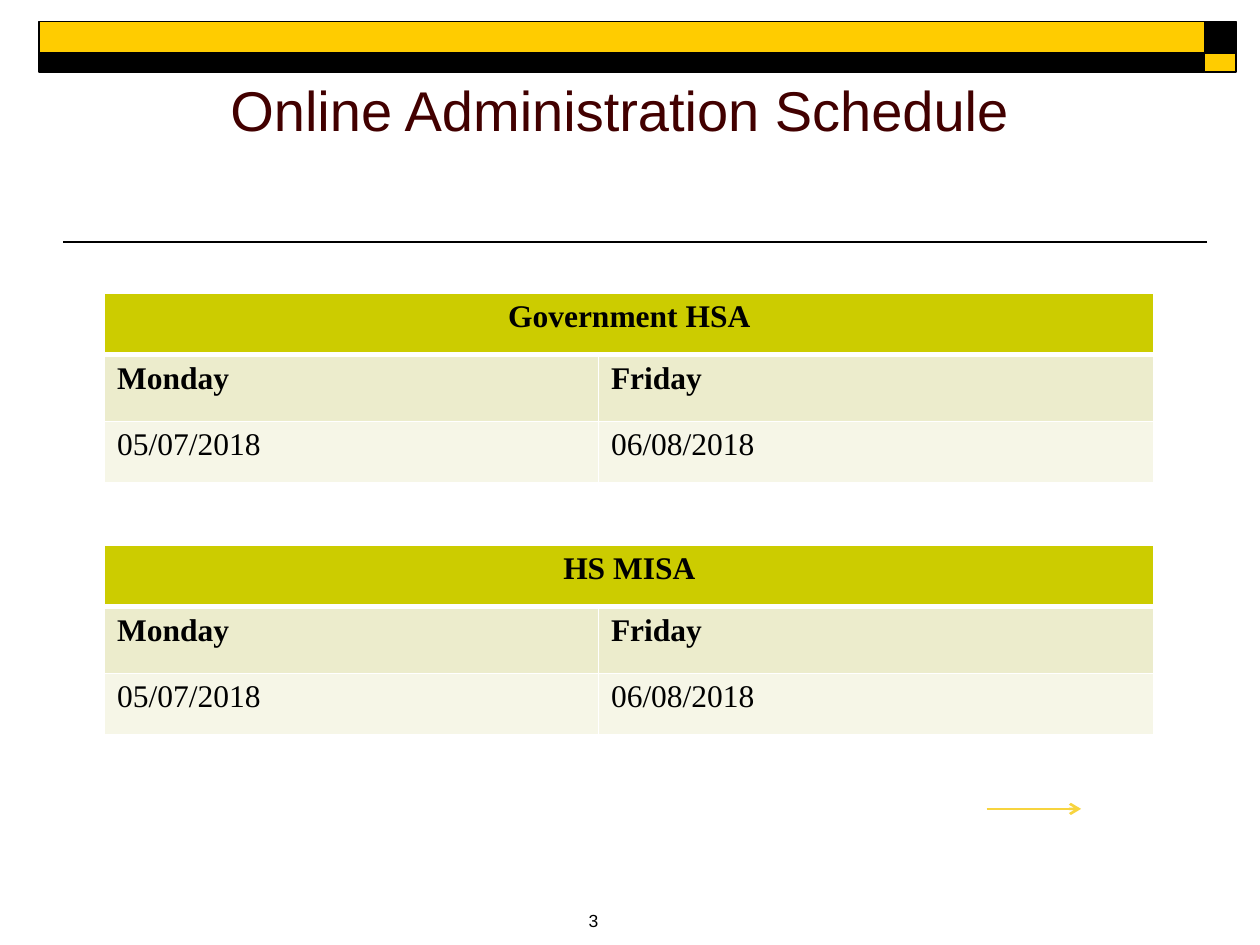
from dataclasses import dataclass

from lxml.etree import SubElement
from pptx import Presentation
from pptx.dml.color import RGBColor as RGB
from pptx.enum.shapes import MSO_CONNECTOR as Connector, MSO_SHAPE as Shape
from pptx.enum.text import MSO_ANCHOR as Anchor, MSO_AUTO_SIZE as AutoSize, PP_ALIGN as Align
from pptx.oxml.ns import qn
from pptx.util import Inches, Pt


@dataclass(frozen=True)
class Theme:
    black: str = "000000"
    white: str = "FFFFFF"
    gold: str = "FFCC00"
    maroon: str = "420000"
    arrow: str = "F7D43F"
    header: str = "CCCC00"
    days: str = "ECECCC"
    dates: str = "F6F6E7"
    sans: str = "Arial"
    serif: str = "Times New Roman"
    title_size: int = 32
    table_size: int = 18
    number_size: int = 10


THEME = Theme()


def add_run(paragraph, text, font, size, color, bold=False):
    run = paragraph.add_run()
    run.text = text
    run.font.name = font
    run.font.size = Pt(size)
    run.font.bold = bold
    run.font.color.rgb = RGB.from_string(color)


def add_line(slide, start, end, color, width, arrow=False):
    line = slide.shapes.add_connector(
        Connector.STRAIGHT, *(Inches(v) for v in (*start, *end)))
    line.line.color.rgb = RGB.from_string(color)
    line.line.width = Pt(width)
    if arrow:
        SubElement(line.line._get_or_add_ln(), qn("a:tailEnd"), type="arrow")
    SubElement(line._element.spPr, qn("a:effectLst"))


def add_banner(slide, left, top, width, height):
    corner, upper = 0.25, 0.25
    columns = ((left, width - corner), (left + width - corner, corner))
    rows = ((top, upper), (top + upper, height - upper))
    for r, (y, h) in enumerate(rows):
        for c, (x, w) in enumerate(columns):
            block = slide.shapes.add_shape(
                Shape.RECTANGLE, Inches(x), Inches(y), Inches(w), Inches(h))
            block.shadow.inherit = False
            block.fill.solid()
            block.fill.fore_color.rgb = RGB.from_string(
                THEME.gold if r == c else THEME.black)
            block.line.color.rgb = RGB.from_string(THEME.black)
            block.line.width = Pt(1)


def add_title(slide, left, top, width, height, text):
    title = slide.shapes.title
    title.left, title.top = Inches(left), Inches(top)
    title.width, title.height = Inches(width), Inches(height)
    frame = title.text_frame
    frame.auto_size = AutoSize.NONE
    frame.vertical_anchor = Anchor.BOTTOM
    heading = frame.paragraphs[0]
    heading.alignment = Align.CENTER
    add_run(heading, text, THEME.sans, THEME.title_size, THEME.maroon)


def add_page_number(slide, left, top, width, height, number):
    frame = slide.shapes.add_textbox(
        Inches(left), Inches(top), Inches(width), Inches(height)).text_frame
    frame.word_wrap = True
    paragraph = frame.paragraphs[0]
    paragraph.alignment = Align.CENTER
    add_run(paragraph, number, THEME.sans, THEME.number_size, THEME.black)


def set_borders(cell, top, bottom):
    properties = cell._tc.get_or_add_tcPr()
    edges = (("a:lnL", 1), ("a:lnR", 1), ("a:lnT", top), ("a:lnB", bottom))
    for position, (tag, width) in enumerate(edges):
        edge = SubElement(properties, qn(tag), w=str(Pt(width)))
        fill = SubElement(edge, qn("a:solidFill"))
        SubElement(fill, qn("a:srgbClr"), val=THEME.white)
        properties.insert(position, edge)


def add_schedule(slide, left, top, width, height, program, dates):
    rows = (
        ((program, ""), THEME.header, True, 1, 3),
        (tuple(dates), THEME.days, True, 3, 1),
        (tuple(dates.values()), THEME.dates, False, 1, 1),
    )
    table = slide.shapes.add_table(
        len(rows), 2, Inches(left), Inches(top), Inches(width), Inches(height)).table
    table.first_row = table.horz_banding = False
    first_column = 3.92
    for column, size in zip(table.columns, (first_column, width - first_column)):
        column.width = Inches(size)
    middle_row = 0.53
    outer_row = (height - middle_row) / 2
    for row, size in zip(table.rows, (outer_row, middle_row, outer_row)):
        row.height = Inches(size)
    for r, (texts, fill, bold, above, below) in enumerate(rows):
        for c, text in enumerate(texts):
            cell = table.cell(r, c)
            cell.fill.solid()
            cell.fill.fore_color.rgb = RGB.from_string(fill)
            set_borders(cell, above, below)
            if text:
                add_run(cell.text_frame.paragraphs[0], text, THEME.serif,
                        THEME.table_size, THEME.black, bold)
    table.cell(0, 0).merge(table.cell(0, 1))
    table.cell(0, 0).text_frame.paragraphs[0].alignment = Align.CENTER


def main():
    deck = Presentation()
    deck.slide_width, deck.slide_height = Inches(10), Inches(7.5)
    slide = deck.slides.add_slide(deck.slide_layouts[5])

    add_line(slide, (9.58, 1.92), (0.5, 1.92), THEME.black, 1)
    add_banner(slide, 0.31, 0.17, 9.5, 0.4)
    add_title(slide, 0.42, 0.6, 9, 0.58, "Online Administration Schedule")
    add_line(slide, (7.83, 6.42), (8.58, 6.42), THEME.arrow, 1.5, arrow=True)
    add_page_number(slide, 3.67, 7.17, 2.08, 0.25, "3")

    dates = {"Monday": "05/07/2018", "Friday": "06/08/2018"}
    for index, program in enumerate(("Government HSA", "HS MISA")):
        add_schedule(slide, 0.83, 2.33 + 2 * index, 8.33, 1.5, program, dates)

    deck.save("out.pptx")


if __name__ == "__main__":
    main()
